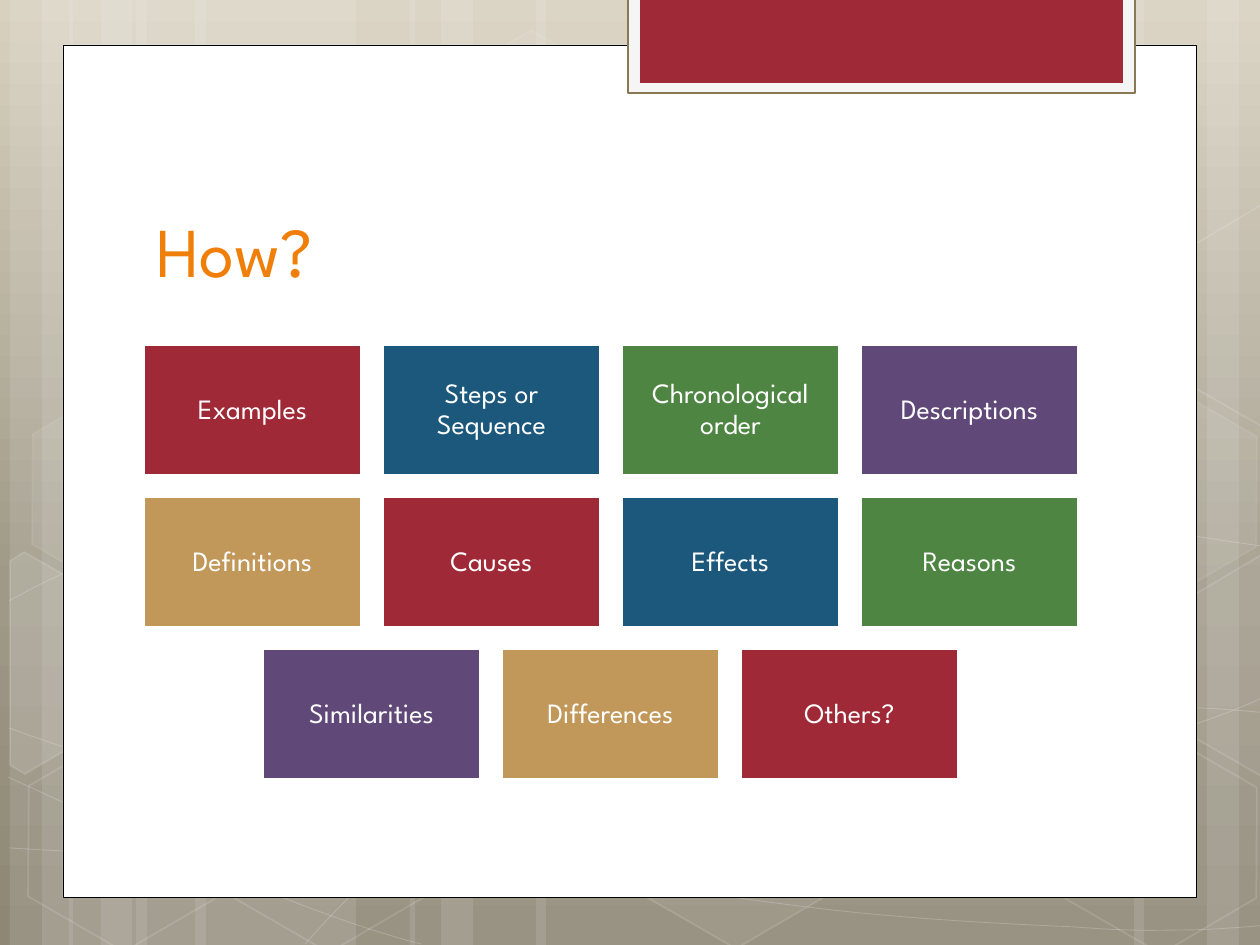
import copy
from dataclasses import dataclass

import pptx
import pptx.dml.color
import pptx.enum.shapes
import pptx.enum.text
import pptx.oxml
import pptx.oxml.ns
import pptx.util

SCALE = 914400 / 126
FONT = "League Spartan"
WHITE = "FFFFFF"
KINDS = pptx.enum.shapes.MSO_SHAPE
ALIGN = pptx.enum.text.PP_ALIGN
ANCHOR = pptx.enum.text.MSO_ANCHOR


@dataclass
class Box:
    left: int
    top: int
    width: int
    height: int


@dataclass
class Style:
    fill: str = ""
    alpha: int = 100
    line: str = ""
    width: float = 1
    fade: int = 100


@dataclass
class Hexa:
    left: int
    top: int
    alpha: int
    fade: int


@dataclass
class Poly:
    points: list
    alpha: int


BACK = [(0, "D8D1C0"), (0.62, "9F9988"), (1, "8E8776")]
BANDS = [
    (136, 220), (10, 63), (42, 105), (195, 220), (69, 63), (101, 105),
    (924, 220), (1207, 63), (1134, 105), (536, 388), (410, 63), (441, 105),
]
CURVES = [
    [(9, 848), (77, 852), (145, 856), (239, 854), (334, 853), (451, 851),
     (577, 838), (703, 825), (882, 801), (998, 777), (1113, 753),
     (1231, 716), (1269, 694)],
    [(9, 601), (45, 581), (82, 562), (152, 543), (224, 524), (326, 496),
     (437, 488), (549, 479), (685, 478), (824, 488), (963, 498),
     (1193, 537), (1269, 547)],
    [(8, 777), (160, 847), (311, 916), (421, 944)],
    [(9, 728), (48, 742), (88, 756), (161, 776), (234, 795), (344, 827),
     (450, 848), (554, 869), (687, 892), (791, 905), (896, 919),
     (1008, 924), (1075, 927), (1140, 932), (1158, 930), (1191, 930),
     (1223, 929), (1246, 927), (1269, 925)],
    [(305, 944), (328, 919), (350, 893), (381, 871), (411, 848), (454, 823),
     (489, 805), (524, 787), (546, 780), (592, 767), (638, 754), (722, 737),
     (766, 728), (811, 719), (818, 719), (857, 717), (895, 713), (958, 709),
     (1000, 708), (1045, 707), (1116, 708), (1116, 708), (1144, 708),
     (1173, 708), (1201, 708), (1223, 709), (1245, 711), (1256, 712),
     (1268, 713), (1264, 712), (1268, 713)],
]
HEXAS = [
    Hexa(421, 45, 4, 8), Hexa(626, 742, 6, 12), Hexa(14, 745, 0, 12),
    Hexa(18, 393, 7, 8), Hexa(219, 746, 0, 12), Hexa(949, 571, 10, 12),
    Hexa(1051, 747, 0, 12), Hexa(1051, 396, 7, 8),
]
POLYS = [
    Poly([(10, 561), (24, 552), (121, 607), (120, 718), (25, 774),
          (10, 765)], 10),
    Poly([(1167, 611), (1261, 555), (1271, 562), (1271, 772), (1263, 777),
          (1167, 722)], 4),
    Poly([(1167, 261), (1261, 205), (1273, 212), (1271, 422), (1263, 427),
          (1167, 372)], 0),
]
ROWS = [
    ["Examples", "Steps or Sequence", "Chronological order", "Descriptions"],
    ["Definitions", "Causes", "Effects", "Reasons"],
    ["Similarities", "Differences", "Others?"],
]
HUES = ["9F2936", "1B587C", "4E8542", "604878", "C19859"]


def emu(px: int) -> int:
    return round(px * SCALE)


def color(text: str):
    return pptx.dml.color.RGBColor.from_string(text)


def fade(shape, route: str, alpha: int) -> None:
    if alpha < 100:
        tone = shape.element.spPr.xpath(route)[0]
        mark = pptx.oxml.ns.qn("a:alpha")
        tone.append(tone.makeelement(mark, {"val": str(alpha * 1000)}))


def paint(shape, style: Style) -> None:
    shape.shadow.inherit = False
    if style.fill and style.alpha:
        shape.fill.solid()
        shape.fill.fore_color.rgb = color(style.fill)
        fade(shape, "a:solidFill/a:srgbClr", style.alpha)
    else:
        shape.fill.background()
    if style.line:
        shape.line.color.rgb = color(style.line)
        shape.line.width = pptx.util.Pt(style.width)
        fade(shape, "a:ln/a:solidFill/a:srgbClr", style.fade)
    else:
        shape.line.fill.background()


def place(box: Box) -> list:
    return [emu(n) for n in (box.left, box.top, box.width, box.height)]


def draw(slide, box: Box, style: Style, kind=KINDS.RECTANGLE):
    shape = slide.shapes.add_shape(kind, *place(box))
    paint(shape, style)
    return shape


def trace(slide, points: list, style: Style, close: bool):
    form = slide.shapes.build_freeform(*points[0], scale=SCALE)
    form.add_line_segments(points[1:], close=close)
    shape = form.convert_to_shape()
    paint(shape, style)
    return shape


def bend(shape) -> None:
    lines = shape.element.xpath(".//a:lnTo")
    for start in range(0, len(lines), 3):
        trio = lines[start:start + 3]
        curve = trio[0].makeelement(pptx.oxml.ns.qn("a:cubicBezTo"), {})
        trio[0].addprevious(curve)
        for line in trio:
            curve.append(line[0])
            line.getparent().remove(line)


def write(shape, text: str, size: int, hue: str, anchor, align) -> None:
    frame = shape.text_frame
    frame.text = text
    frame.word_wrap = True
    frame.vertical_anchor = anchor
    para = frame.paragraphs[0]
    para.alignment = align
    font = para.runs[0].font
    font.name = FONT
    font.size = pptx.util.Pt(size)
    font.color.rgb = color(hue)


def shade(slide) -> None:
    fill = slide.background.fill
    fill.gradient()
    fill.gradient_angle = 270
    stops = slide.element.xpath(".//a:gsLst")[0]
    stops.append(copy.deepcopy(stops[0]))
    for stop, (spot, hue) in zip(fill.gradient_stops, BACK):
        stop.position = spot
        stop.color.rgb = color(hue)


def scene(slide) -> None:
    for left, width in BANDS:
        draw(slide, Box(left, 0, width, 945), Style(WHITE, 10))
    for points in CURVES:
        bend(trace(slide, points, Style(line=WHITE, width=0.5, fade=20), False))
    for item in HEXAS:
        shape = draw(slide, Box(item.left, item.top, 220, 192),
                     Style(WHITE, item.alpha, WHITE, 1, item.fade), KINDS.HEXAGON)
        shape.adjustments[0] = 0.285
        shape.rotation = 30
    for item in POLYS:
        trace(slide, item.points, Style(WHITE, item.alpha, WHITE, 1, 12), True)
    draw(slide, Box(63, 45, 1134, 853), Style(WHITE, line="000000", width=0.5))
    draw(slide, Box(628, -3, 507, 96), Style("F5F5F5", line="887952", width=1.25))
    draw(slide, Box(640, -3, 483, 86), Style("9F2936"))


def tiles(slide) -> None:
    step, count = 239, 0
    for row, names in enumerate(ROWS):
        left = 144 + (4 - len(names)) * step // 2
        for col, name in enumerate(names):
            box = Box(left + col * step, 345 + row * 152, 217, 130)
            shape = draw(slide, box, Style(HUES[count % 5], line=WHITE, width=1.25))
            write(shape, name, 16, WHITE, ANCHOR.MIDDLE, ALIGN.CENTER)
            frame = shape.text_frame
            frame.margin_left = frame.margin_right = emu(9)
            frame.margin_top = frame.margin_bottom = emu(9)
            frame.paragraphs[0].line_spacing = 0.9
            count += 1


def main() -> None:
    deck = pptx.Presentation()
    deck.slide_width, deck.slide_height = emu(1260), emu(945)
    slide = deck.slides.add_slide(deck.slide_layouts[6])
    shade(slide)
    scene(slide)
    title = slide.shapes.add_textbox(*place(Box(144, 141, 968, 157)))
    write(title, "How?", 40, "F07F09", ANCHOR.BOTTOM, ALIGN.LEFT)
    tiles(slide)
    deck.save("out.pptx")


if __name__ == "__main__":
    main()
